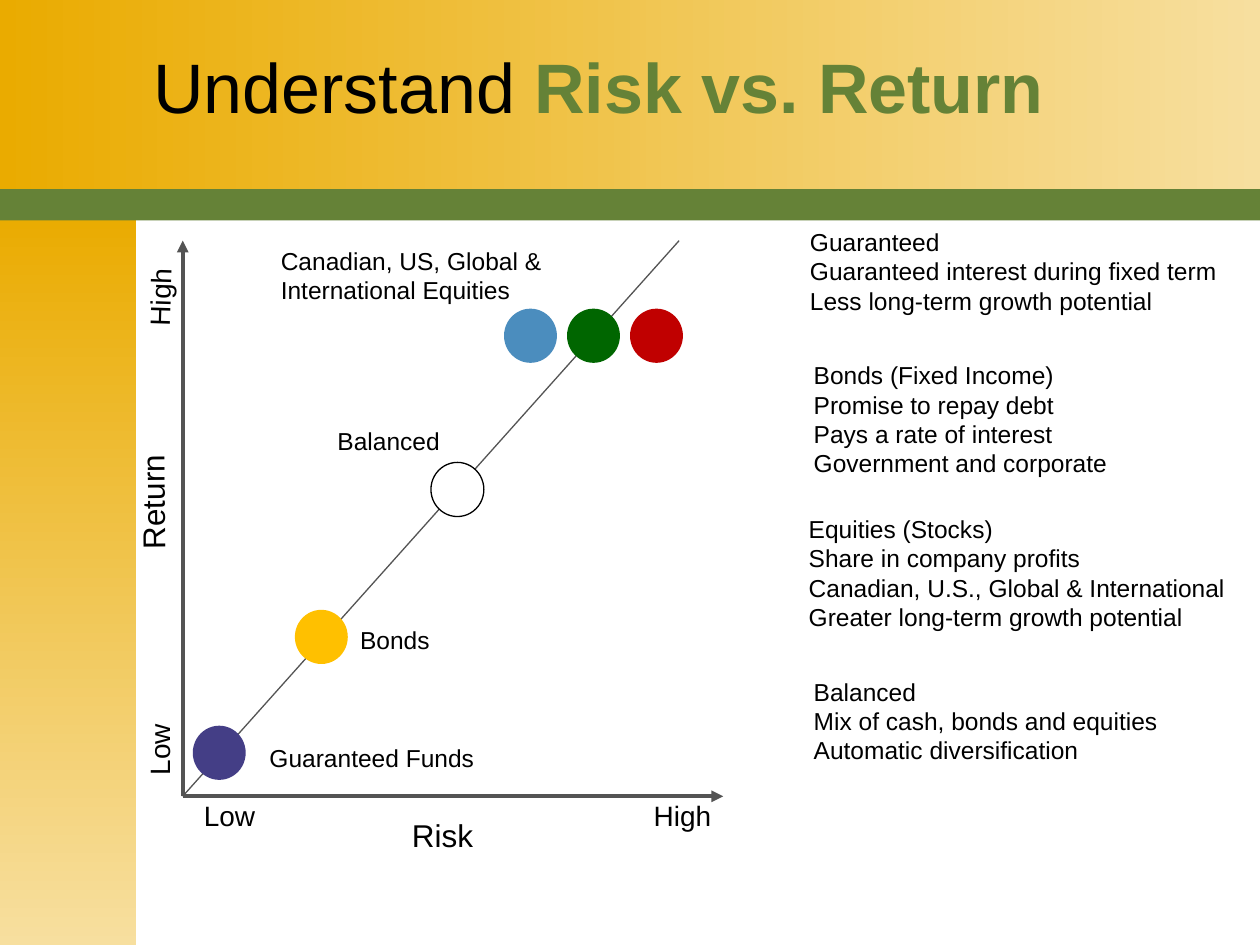
"""Build the risk versus return slide."""
from dataclasses import dataclass

import pptx
import pptx.dml.color
import pptx.enum.shapes
import pptx.enum.text
import pptx.oxml.ns
import pptx.util
from lxml import etree
from pptx.dml.color import RGBColor
from pptx.util import Inches

BLACK = RGBColor(0x00, 0x00, 0x00)
WHITE = RGBColor(0xFF, 0xFF, 0xFF)
GREEN = RGBColor(0x65, 0x82, 0x37)
GOLD = RGBColor(0xEA, 0xAB, 0x00)
PALE_GOLD = RGBColor(0xF7, 0xDF, 0x9F)
AXIS_GREY = RGBColor(0x54, 0x54, 0x54)
PURPLE = RGBColor(0x44, 0x3E, 0x86)
AMBER = RGBColor(0xFF, 0xC0, 0x00)
BLUE = RGBColor(0x4B, 0x8D, 0xBE)
DARK_GREEN = RGBColor(0x00, 0x66, 0x00)
RED = RGBColor(0xC0, 0x00, 0x00)

FONT = "Arial"
LINE_PITCH = 1.2
ORIGIN = (1.45, 6.32)
AXIS_TOP = 1.91
SHAPES = pptx.enum.shapes.MSO_SHAPE


@dataclass
class Label:
    left: float
    top: float
    width: float
    height: float
    lines: tuple[str, ...]
    size: int = 14
    rotation: float = 0
    wrap: bool = False


@dataclass
class Marker:
    left: float
    top: float
    color: RGBColor
    outlined: bool = False


@dataclass
class Ray:
    end: tuple[float, float]
    weight: float
    arrow: bool


RAYS = (
    Ray((ORIGIN[0], AXIS_TOP), 2.25, True),
    Ray((5.74, ORIGIN[1]), 2.25, True),
    Ray((5.39, AXIS_TOP), 0.75, False),
)

MARKERS = (
    Marker(1.53, 5.76, PURPLE),
    Marker(2.34, 4.84, AMBER),
    Marker(3.42, 3.67, WHITE, True),
    Marker(4, 2.45, BLUE),
    Marker(4.5, 2.45, DARK_GREEN),
    Marker(5, 2.45, RED),
)

LABELS = (
    Label(0.73, 3.78, 0.96, 0.4, ("Return",), 18, 269.5),
    Label(3.17, 6.43, 0.69, 0.4, ("Risk",), 18),
    Label(1.52, 6.29, 0.61, 0.37, ("Low",), 16),
    Label(5.09, 6.29, 0.66, 0.37, ("High",), 16),
    Label(0.96, 5.76, 0.61, 0.37, ("Low",), 16, 270),
    Label(0.94, 2.17, 0.66, 0.37, ("High",), 16, 271.8),
    Label(2.04, 5.85, 1.83, 0.34, ("Guaranteed Funds",)),
    Label(2.76, 4.91, 0.76, 0.34, ("Bonds",)),
    Label(2.58, 3.33, 1.02, 0.34, ("Balanced",)),
    Label(2.13, 1.9, 2.28, 0.57,
          ("Canadian, US, Global &", "International Equities")),
    Label(6.33, 1.75, 3.5, 0.81,
          ("Guaranteed", "Guaranteed interest during fixed term",
           "Less long-term growth potential")),
    Label(6.36, 2.81, 3, 1.04,
          ("Bonds (Fixed Income)", "Promise to repay debt",
           "Pays a rate of interest", "Government and corporate"), wrap=True),
    Label(6.32, 4.03, 3.67, 1.04,
          ("Equities (Stocks)", "Share in company profits",
           "Canadian, U.S., Global & International",
           "Greater long-term growth potential"), wrap=True),
    Label(6.36, 5.32, 3.14, 0.81,
          ("Balanced", "Mix of cash, bonds and equities",
           "Automatic diversification"), wrap=True),
)


def add_span(para, text: str, size: int, color: RGBColor = BLACK, bold: bool = False) -> None:
    span = para.add_run()
    span.text = text
    span.font.name = FONT
    span.font.size = pptx.util.Pt(size)
    span.font.bold = bold
    span.font.color.rgb = color


def add_plain_shape(page, kind, left: float, top: float, width: float, height: float):
    shape = page.shapes.add_shape(
        kind, Inches(left), Inches(top), Inches(width), Inches(height))
    shape.shadow.inherit = False
    shape.line.fill.background()
    return shape


def add_gradient(page, left: float, top: float, width: float, height: float, angle: int) -> None:
    panel = add_plain_shape(page, SHAPES.RECTANGLE, left, top, width, height)
    panel.fill.gradient()
    panel.fill.gradient_angle = angle
    for stop, color in zip(panel.fill.gradient_stops, (GOLD, PALE_GOLD)):
        stop.color.rgb = color


def add_ray(page, ray: Ray) -> None:
    points = [Inches(value) for value in ORIGIN + ray.end]
    line = page.shapes.add_connector(pptx.enum.shapes.MSO_CONNECTOR.STRAIGHT, *points)
    line.line.color.rgb = AXIS_GREY
    line.line.width = pptx.util.Pt(ray.weight)
    properties = line.element.spPr
    if ray.arrow:
        outline = properties.find(pptx.oxml.ns.qn("a:ln"))
        etree.SubElement(outline, pptx.oxml.ns.qn("a:tailEnd"), type="triangle")
    etree.SubElement(properties, pptx.oxml.ns.qn("a:effectLst"))


def add_marker(page, marker: Marker) -> None:
    circle = add_plain_shape(page, SHAPES.OVAL, marker.left, marker.top, 0.42, 0.43)
    circle.fill.solid()
    circle.fill.fore_color.rgb = marker.color
    if marker.outlined:
        circle.line.color.rgb = BLACK
        circle.line.width = pptx.util.Pt(0.75)


def add_label(page, label: Label) -> None:
    box = page.shapes.add_textbox(
        Inches(label.left), Inches(label.top), Inches(label.width), Inches(label.height))
    box.rotation = label.rotation
    frame = box.text_frame
    frame.word_wrap = label.wrap
    for index, line in enumerate(label.lines):
        para = frame.add_paragraph() if index else frame.paragraphs[0]
        para.line_spacing = pptx.util.Pt(label.size * LINE_PITCH)
        add_span(para, line, label.size)


def format_title(page) -> None:
    title = page.shapes.title
    title.left, title.top = Inches(0.5), Inches(0)
    title.width, title.height = Inches(8.5), Inches(1.36)
    title.text_frame.vertical_anchor = pptx.enum.text.MSO_ANCHOR.MIDDLE
    para = title.text_frame.paragraphs[0]
    para.alignment = pptx.enum.text.PP_ALIGN.CENTER
    add_span(para, "Understand ", 40)
    add_span(para, "Risk vs. Return", 40, GREEN, True)
    title.element.getparent().append(title.element)


def main() -> None:
    deck = pptx.Presentation()
    deck.slide_width, deck.slide_height = Inches(10), Inches(7.5)
    page = deck.slides.add_slide(deck.slide_layouts[5])
    add_gradient(page, 0, 0, 10, 1.5, 0)
    add_gradient(page, 0, 1.67, 1.08, 5.83, 270)
    for ray in RAYS:
        add_ray(page, ray)
    for marker in MARKERS:
        add_marker(page, marker)
    for label in LABELS:
        add_label(page, label)
    format_title(page)
    band = add_plain_shape(page, SHAPES.RECTANGLE, 0, 1.5, 10, 0.25)
    band.fill.solid()
    band.fill.fore_color.rgb = GREEN
    deck.save("out.pptx")


if __name__ == "__main__":
    main()
